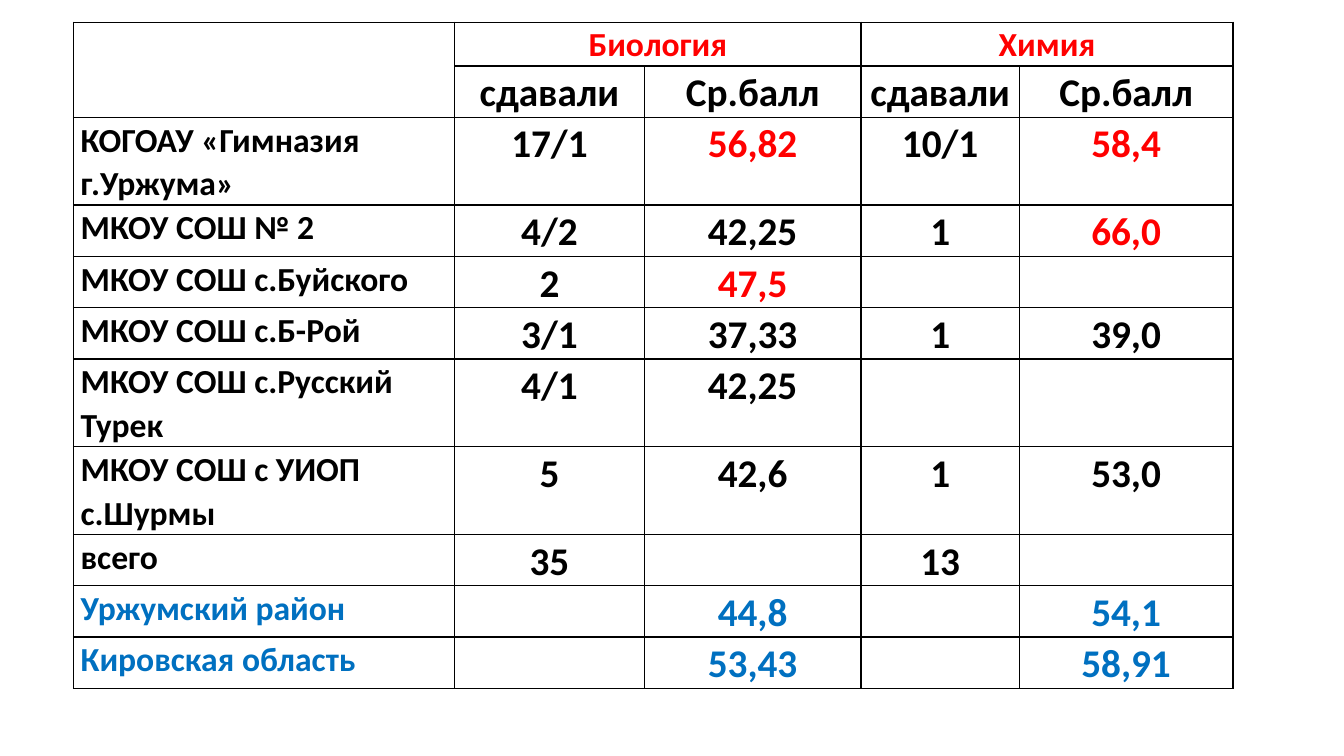
import pptx
import pptx.dml.color
import pptx.enum.text
import pptx.oxml
import pptx.oxml.ns
import pptx.util

Inches = pptx.util.Inches
Pt = pptx.util.Pt
RGBColor = pptx.dml.color.RGBColor
Align = pptx.enum.text.PP_ALIGN

BLACK = RGBColor(0x00, 0x00, 0x00)
RED = RGBColor(0xFF, 0x00, 0x00)
BLUE = RGBColor(0x00, 0x70, 0xC0)

WIDTHS = [3.78, 1.88, 2.15, 1.57, 2.12]
ROWS = [
    ["", "Биология", "", "Химия", ""],
    ["", "сдавали", "Ср.балл", "сдавали", "Ср.балл"],
    ["КОГОАУ «Гимназия г.Уржума»", "17/1", "56,82", "10/1", "58,4"],
    ["МКОУ СОШ № 2", "4/2", "42,25", "1", "66,0"],
    ["МКОУ СОШ с.Буйского", "2", "47,5", "", ""],
    ["МКОУ СОШ с.Б-Рой", "3/1", "37,33", "1", "39,0"],
    ["МКОУ СОШ с.Русский Турек", "4/1", "42,25", "", ""],
    ["МКОУ СОШ с УИОП с.Шурмы", "5", "42,6", "1", "53,0"],
    ["всего", "35", "", "13", ""],
    ["Уржумский район", "", "44,8", "", "54,1"],
    ["Кировская область", "", "53,43", "", "58,91"],
]
MERGES = [(0, 0, 1, 0), (0, 1, 0, 2), (0, 3, 0, 4)]
BEST = {"Биология", "Химия", "56,82", "58,4", "66,0", "47,5"}
REGION = 9


class Deck:
    """Holds the table style and the current slide."""

    font = "Calibri"
    small = Pt(24)
    large = Pt(28)
    spacing = 1.07
    pad = Inches(0.07)
    line = Pt(1)

    def __init__(self):
        self.prs = pptx.Presentation()
        self.prs.slide_width = Inches(13.33)
        self.prs.slide_height = Inches(7.5)
        self.slide = self.prs.slides.add_slide(self.prs.slide_layouts[6])

    def border(self, cell):
        props = cell._tc.get_or_add_tcPr()
        for spot, side in enumerate("LRTB"):
            props.insert(spot, pptx.oxml.parse_xml(
                f'<a:ln{side} {pptx.oxml.ns.nsdecls("a")} w="{self.line}">'
                f'<a:solidFill><a:srgbClr val="{BLACK}"/></a:solidFill>'
                f'</a:ln{side}>'))

    def cell(self, cell, text, size, color, align):
        cell.fill.background()
        self.border(cell)
        cell.margin_left = cell.margin_right = self.pad
        cell.margin_top = cell.margin_bottom = 0
        cell.text = text
        para = cell.text_frame.paragraphs[0]
        para.alignment = align
        para.line_spacing = self.spacing
        para.font.name = self.font
        para.font.size = size
        para.font.bold = True
        para.font.color.rgb = color

    def table(self, rows, widths, left, top, height, step):
        frame = self.slide.shapes.add_table(
            len(rows), len(widths), Inches(left), Inches(top),
            Inches(sum(widths)), Inches(height))
        grid = frame.table
        for col, width in zip(grid.columns, widths):
            col.width = Inches(width)
        for row in grid.rows:
            row.height = Inches(step)
        frame.height = Inches(height)
        for r, row in enumerate(rows):
            for c, text in enumerate(row):
                size = self.small if r == 0 or c == 0 else self.large
                color = RED if text in BEST else BLUE if r >= REGION else BLACK
                align = Align.CENTER if c else Align.LEFT
                self.cell(grid.cell(r, c), text, size, color, align)
        for r, c, end, last in MERGES:
            grid.cell(r, c).merge(grid.cell(end, last))


def main():
    deck = Deck()
    deck.table(ROWS, WIDTHS, 0.73, 0.22, 6.49, 0.41)
    deck.prs.save("out.pptx")


if __name__ == "__main__":
    main()
